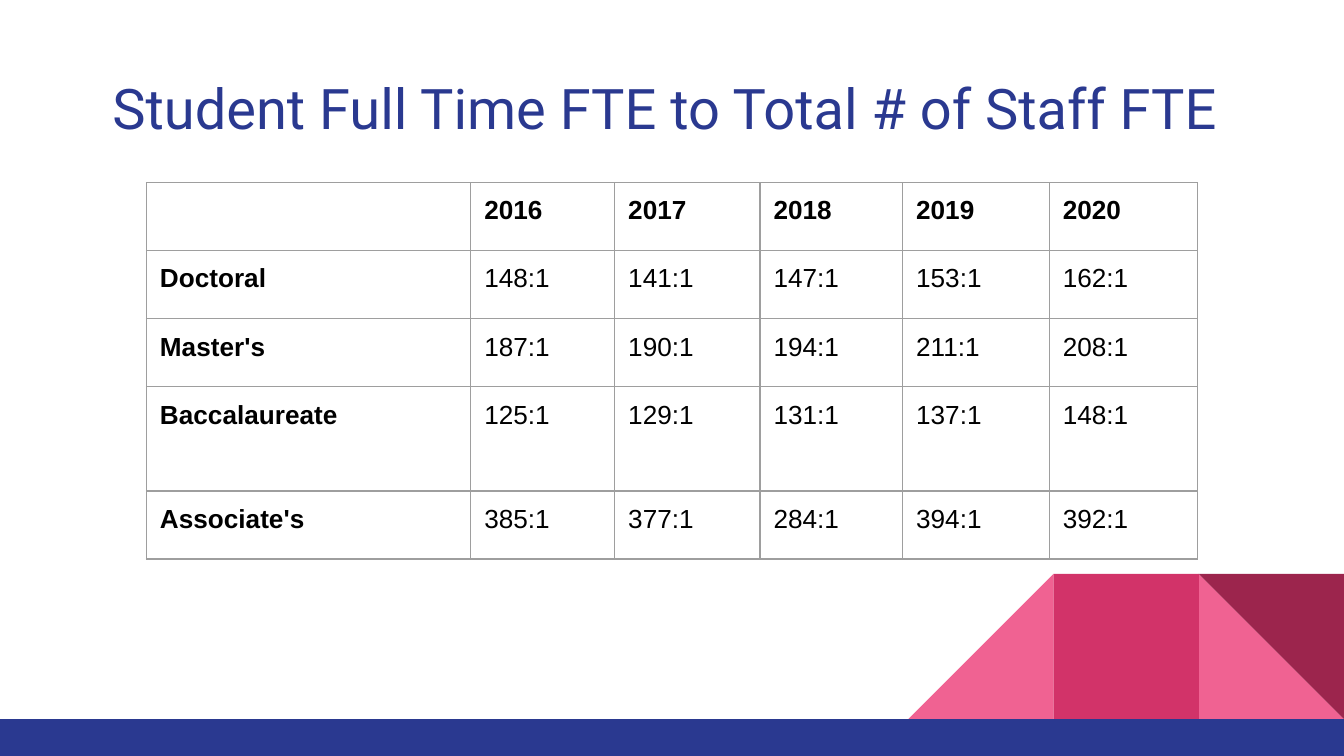
from lxml import etree
from pptx import Presentation, util as u
from pptx.dml.color import RGBColor
from pptx.enum import shapes, text
from pptx.oxml.ns import qn

WIDTH = 10
HEIGHT = WIDTH * 9 / 16
NAVY, PINK, ROSE, WINE, GREY = "2A3990", "F06292", "D23369", "9C254D", "9E9E9E"
INSET = u.Inches(0.1)
COLUMNS = [2.41, 1.07, 1.08, 1.06, 1.09, 1.1]
ROWS = [0.51, 0.51, 0.51, 0.78, 0.51]
RATIOS = [
    ["", "2016", "2017", "2018", "2019", "2020"],
    ["Doctoral", "148:1", "141:1", "147:1", "153:1", "162:1"],
    ["Master's", "187:1", "190:1", "194:1", "211:1", "208:1"],
    ["Baccalaureate", "125:1", "129:1", "131:1", "137:1", "148:1"],
    ["Associate's", "385:1", "377:1", "284:1", "394:1", "392:1"],
]


def color(value):
    return RGBColor.from_string(value)


def inches(box):
    return [u.Inches(length) for length in box]


def write(frame, words, *, size, font="Arial", fill="000000", bold=False,
          align=text.PP_ALIGN.LEFT):
    paragraph = frame.paragraphs[0]
    paragraph.alignment = align
    run = paragraph.add_run()
    run.text = words
    run.font.size, run.font.name, run.font.bold = u.Pt(size), font, bold
    run.font.color.rgb = color(fill)


def add_block(slide, kind, box, fill):
    shape = slide.shapes.add_shape(kind, *inches(box))
    shape.shadow.inherit = False
    shape.fill.solid()
    shape.fill.fore_color.rgb = color(fill)
    shape.line.fill.background()
    return shape


def add_decoration(slide, box):
    """Bottom band with three square tiles standing on its right end."""
    left, top, width, height = box
    tile = 0.108 * width
    triangle = shapes.MSO_SHAPE.RIGHT_TRIANGLE
    rectangle = shapes.MSO_SHAPE.RECTANGLE

    def tile_box(from_right):
        return left + width - from_right * tile, top - tile, tile, tile

    add_block(slide, triangle, tile_box(1), PINK)
    slope = add_block(slide, triangle, tile_box(3), PINK)
    slope.element.spPr.find(qn("a:xfrm")).set("flipH", "1")
    add_block(slide, rectangle, tile_box(2), ROSE)
    add_block(slide, triangle, tile_box(1), WINE).rotation = 180
    add_block(slide, rectangle, box, NAVY)


def add_title(slide, box):
    frame = slide.shapes.add_textbox(*inches(box)).text_frame
    frame.word_wrap = True
    frame.vertical_anchor = text.MSO_ANCHOR.TOP
    frame.margin_left = frame.margin_right = INSET
    frame.margin_top = frame.margin_bottom = INSET
    write(frame, "Student Full Time FTE to Total # of Staff FTE ", size=30,
          font="Roboto", fill=NAVY, align=text.PP_ALIGN.CENTER)


def add_borders(cell):
    properties = cell._tc.get_or_add_tcPr()
    for index, side in enumerate(("lnL", "lnR", "lnT", "lnB")):
        line = etree.Element(qn(f"a:{side}"), w=str(u.Pt(0.75)))
        solid = etree.SubElement(line, qn("a:solidFill"))
        etree.SubElement(solid, qn("a:srgbClr"), val=GREY)
        properties.insert(index, line)


def add_ratio_table(slide, box):
    left, top, width, height = box
    table = slide.shapes.add_table(len(ROWS), len(COLUMNS), *inches(box)).table
    table.horz_banding = False
    # Share the box out in proportion to the grid
    for column, share in zip(table.columns, COLUMNS):
        column.width = u.Inches(width * share / sum(COLUMNS))
    for row, share in zip(table.rows, ROWS):
        row.height = u.Inches(height * share / sum(ROWS))
    # Fill the cells; headings are bold
    for r, values in enumerate(RATIOS):
        for c, value in enumerate(values):
            cell = table.cell(r, c)
            cell.fill.background()
            cell.margin_left = cell.margin_right = INSET
            cell.margin_top = cell.margin_bottom = INSET
            add_borders(cell)
            if value:
                write(cell.text_frame, value, size=14, bold=r == 0 or c == 0)


def main():
    presentation = Presentation()
    presentation.slide_width = u.Inches(WIDTH)
    presentation.slide_height = u.Inches(HEIGHT)
    slide = presentation.slides.add_slide(presentation.slide_layouts[6])
    add_decoration(slide, (0, 5.35, WIDTH, HEIGHT - 5.35))
    add_title(slide, (0.34, 0.45, WIDTH - 2 * 0.34, 0.66))
    add_ratio_table(slide, (1.09, 1.36, WIDTH - 2 * 1.09, 2.8))
    presentation.save("out.pptx")


if __name__ == "__main__":
    main()
